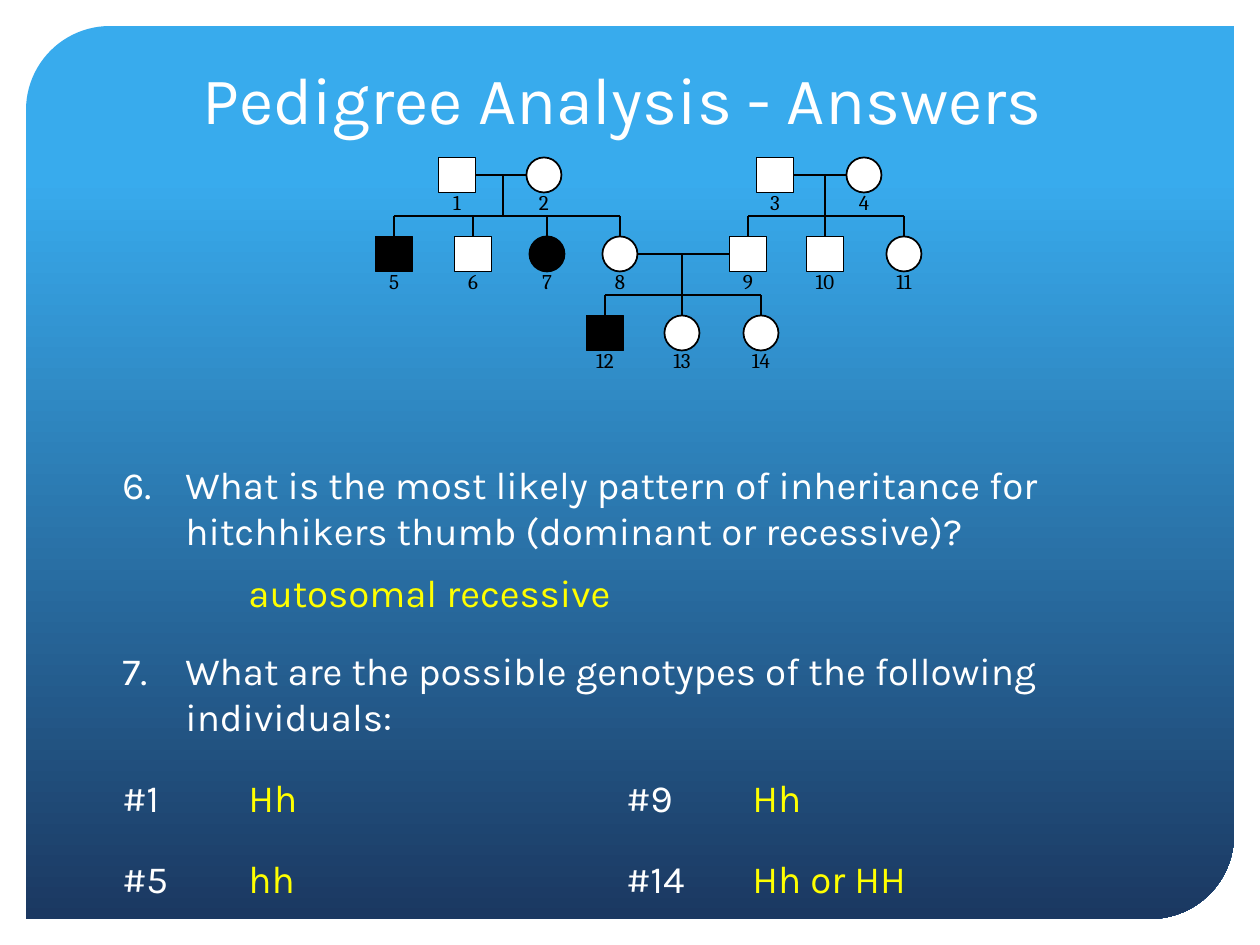
from lxml.etree import SubElement
from pptx import Presentation
from pptx.dml.color import RGBColor
from pptx.enum.shapes import MSO_CONNECTOR, MSO_SHAPE
from pptx.enum.text import MSO_ANCHOR, PP_ALIGN
from pptx.oxml.ns import qn
from pptx.util import Pt

PX = 914400 // 126
WHITE = RGBColor(0xFF, 0xFF, 0xFF)
BLACK = RGBColor(0x00, 0x00, 0x00)
YELLOW = RGBColor(0xFF, 0xFF, 0x00)
SKY = RGBColor(0x38, 0xAB, 0xED)
NAVY = RGBColor(0x1B, 0x38, 0x61)

TITLE = "Pedigree Analysis - Answers"

# (question number or None, line spacing or None, runs)
ANSWERS = [
    (6, None, [("What is the most likely pattern of inheritance for "
                "hitchhikers thumb (dominant or recessive)?", WHITE)]),
    (None, 0.5, [("\tautosomal recessive", YELLOW)]),
    (7, None, [("What are the possible genotypes of the following individuals:", WHITE)]),
    (None, None, [("#1\t", WHITE), ("Hh", YELLOW), ("\t#9\t", WHITE), ("Hh", YELLOW)]),
    (None, None, [("#5\t", WHITE), ("hh", YELLOW), ("\t#14\t", WHITE), ("Hh or HH", YELLOW)]),
]
TAB_STOPS = (126, 504, 630)
HANGING = 63

# Each generation: centre height, then (individual, centre x, sex)
GENERATIONS = [
    (175, [(1, 457, "M"), (2, 544, "F"), (3, 775, "M"), (4, 864, "F")]),
    (254, [(5, 394, "M"), (6, 473, "M"), (7, 547, "F"), (8, 620, "F"),
           (9, 748, "M"), (10, 825, "M"), (11, 904, "F")]),
    (333, [(12, 605, "M"), (13, 682, "F"), (14, 761, "F")]),
]
AFFECTED = {5, 7, 12}
# (father and mother, x of the line of descent, children)
FAMILIES = [
    ((1, 2), 503, (5, 6, 7, 8)),
    ((3, 4), 825, (9, 10, 11)),
    ((8, 9), 682, (12, 13, 14)),
]
SYMBOL = {"M": (MSO_SHAPE.RECTANGLE, 37), "F": (MSO_SHAPE.OVAL, 35)}
SYMBOL_HEIGHT = 35
RADIUS = 18
SIBLING_DROP = 41
LABEL_WIDTH, LABEL_HEIGHT, LABEL_DROP = 48, 38, 8


def px(*lengths):
    return [length * PX for length in lengths]


def add_run(paragraph, text, size, font, color):
    run = paragraph.add_run()
    run.text = text
    run.font.size = Pt(size)
    run.font.name = font
    run.font.color.rgb = color


def add_text_frame(slide, *box, wrap=True):
    frame = slide.shapes.add_textbox(*px(*box)).text_frame
    frame.word_wrap = wrap
    return frame


def add_line(slide, x1, y1, x2, y2):
    line = slide.shapes.add_connector(MSO_CONNECTOR.STRAIGHT, *px(x1, y1, x2, y2))
    line.line.color.rgb = BLACK
    line.line.width = Pt(1)
    SubElement(line._element.spPr, qn("a:effectLst"))


def add_panel(slide):
    panel = slide.shapes.add_shape(MSO_SHAPE.ROUND_2_DIAG_RECTANGLE, *px(26, 26, 1208, 893))
    panel.adjustments[0] = 0.094
    panel.adjustments[1] = 0
    panel.shadow.inherit = False
    panel.line.fill.background()
    panel.fill.gradient()
    panel.fill.gradient_angle = 270
    for stop, position, color in zip(panel.fill.gradient_stops, (0.17, 1), (SKY, NAVY)):
        stop.position = position
        stop.color.rgb = color


def add_title(slide):
    frame = add_text_frame(slide, 190, 0, 1044, 144)
    frame.vertical_anchor = MSO_ANCHOR.BOTTOM
    add_run(frame.paragraphs[0], TITLE, 38, "Karla", WHITE)


def format_indent(paragraph, number):
    """Number a question with a hanging indent, or set tab stops for an answer."""
    props = paragraph._p.get_or_add_pPr()
    if number:
        props.set("marL", str(HANGING * PX))
        props.set("indent", str(-HANGING * PX))
        SubElement(props, qn("a:buFont"), typeface="+mj-lt")
        SubElement(props, qn("a:buAutoNum"), type="arabicPeriod", startAt=str(number))
    else:
        SubElement(props, qn("a:buNone"))
        tabs = SubElement(props, qn("a:tabLst"))
        for stop in TAB_STOPS:
            SubElement(tabs, qn("a:tab"), pos=str(stop * PX), algn="l")


def add_answers(slide):
    frame = add_text_frame(slide, 110, 455, 1044, 513)
    for index, (number, spacing, runs) in enumerate(ANSWERS):
        paragraph = frame.add_paragraph() if index else frame.paragraphs[0]
        format_indent(paragraph, number)
        if index:
            paragraph.space_before = Pt(20)
        if spacing:
            paragraph.line_spacing = spacing
        for text, color in runs:
            add_run(paragraph, text, 22, "Karla", color)


def add_family_lines(slide):
    place = {who: (x, y) for y, members in GENERATIONS for who, x, _ in members}
    for (father, mother), descent_x, children in FAMILIES:
        left, y = place[father]
        right = place[mother][0]
        bar_y = y + SIBLING_DROP
        add_line(slide, left + RADIUS, y, right - RADIUS, y)
        add_line(slide, descent_x, y, descent_x, bar_y)
        add_line(slide, place[children[0]][0], bar_y, place[children[-1]][0], bar_y)
        for child in children:
            x, child_y = place[child]
            add_line(slide, x, bar_y, x, child_y - RADIUS)


def add_individual(slide, who, x, y, sex):
    preset, width = SYMBOL[sex]
    symbol = slide.shapes.add_shape(
        preset, *px(x - width / 2, y - SYMBOL_HEIGHT / 2, width, SYMBOL_HEIGHT))
    symbol.shadow.inherit = False
    symbol.fill.solid()
    symbol.fill.fore_color.rgb = BLACK if who in AFFECTED else WHITE
    symbol.line.color.rgb = BLACK
    symbol.line.width = Pt(1)

    label = add_text_frame(slide, x - LABEL_WIDTH // 2, y + LABEL_DROP,
                           LABEL_WIDTH, LABEL_HEIGHT, wrap=False)
    label.paragraphs[0].alignment = PP_ALIGN.CENTER
    add_run(label.paragraphs[0], str(who), 12, "Cambria", BLACK)


def main():
    deck = Presentation()
    deck.slide_width, deck.slide_height = px(1260, 945)
    slide = deck.slides.add_slide(deck.slide_layouts[6])
    add_panel(slide)
    add_title(slide)
    add_answers(slide)
    add_family_lines(slide)
    for y, members in GENERATIONS:
        for who, x, sex in members:
            add_individual(slide, who, x, y, sex)
    deck.save("out.pptx")


if __name__ == "__main__":
    main()
